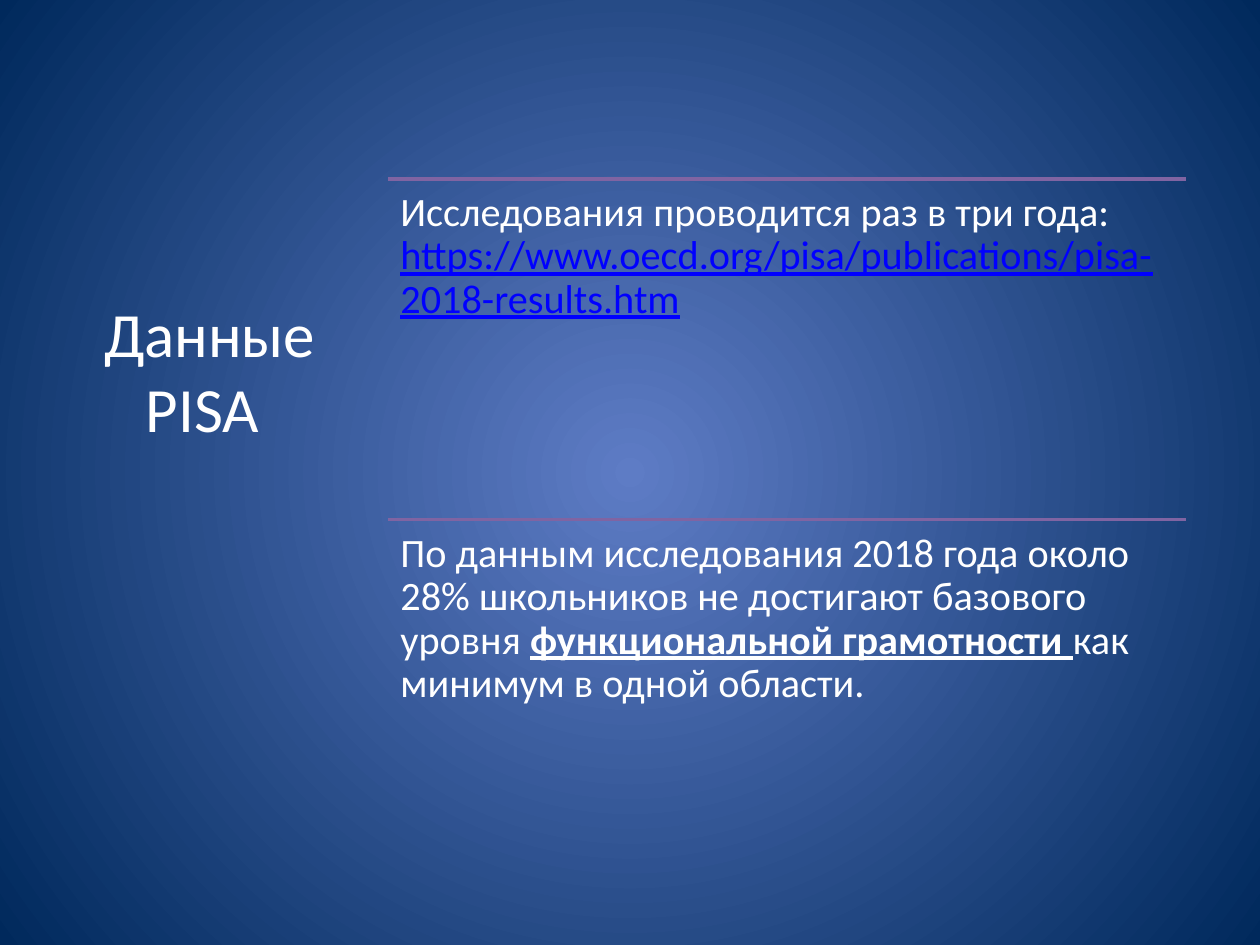
"""Build a slide with PISA study facts beside a title."""

from dataclasses import dataclass

from lxml.etree import SubElement
from pptx import Presentation
from pptx.dml.color import RGBColor
from pptx.enum.shapes import MSO_CONNECTOR
from pptx.enum.text import MSO_ANCHOR, PP_ALIGN
from pptx.oxml.ns import qn
from pptx.slide import Slide
from pptx.util import Inches, Pt


@dataclass(frozen=True)
class Theme:
    font: str = "Calibri"
    title_size: int = 36
    body_size: int = 23
    rule_width: int = 2
    text: str = "FFFFFF"
    link: str = "0000FF"
    rule: str = "8064A2"
    glow: str = "5E7CC5"
    edge: str = "00295C"


@dataclass(frozen=True)
class Span:
    text: str
    color: str
    bold: bool = False
    underline: bool = False


@dataclass(frozen=True)
class Area:
    left: float
    top: float
    width: float
    height: float


THEME = Theme()
TITLE_AREA = Area(0.5, 0.3, 2.33, 5.87)
FACTS_AREA = Area(3.08, 1.42, 6.33, 5.41)
FACTS = (
    (
        Span("Исследования проводится раз в три года: ", THEME.text),
        Span(
            "https://www.oecd.org/pisa/publications/pisa-2018-results.htm",
            THEME.link,
            underline=True,
        ),
    ),
    (
        Span(
            "По данным исследования 2018 года около 28% школьников "
            "не достигают базового уровня ",
            THEME.text,
        ),
        Span("функциональной грамотности ", THEME.text, bold=True, underline=True),
        Span("как минимум в одной области.", THEME.text),
    ),
)


def paint_background(page: Slide) -> None:
    """Fill the page with a glow that darkens from its centre."""
    fill = page.background.fill
    fill.gradient()
    for stop, color in zip(fill.gradient_stops, (THEME.glow, THEME.edge)):
        stop.color.rgb = RGBColor.from_string(color)
    gradient = next(page.element.iter(qn("a:gradFill")))
    gradient.remove(gradient.find(qn("a:lin")))
    circle = SubElement(gradient, qn("a:path"), {"path": "circle"})
    SubElement(circle, qn("a:fillToRect"), dict.fromkeys("ltrb", "50000"))


def add_text(
    page: Slide,
    area: Area,
    spans: tuple[Span, ...],
    *,
    size: int,
    align: PP_ALIGN = PP_ALIGN.LEFT,
    anchor: MSO_ANCHOR = MSO_ANCHOR.TOP,
    spacing: float = 1.0,
    margin: float = 0.1,
    closing_break: bool = False,
) -> None:
    """Add a wrapped text box holding one paragraph of spans."""
    box = page.shapes.add_textbox(
        Inches(area.left), Inches(area.top), Inches(area.width), Inches(area.height)
    )
    frame = box.text_frame
    frame.word_wrap = True
    frame.vertical_anchor = anchor
    frame.margin_top = frame.margin_bottom = Inches(margin)
    frame.margin_left = frame.margin_right = Inches(0.1)
    para = frame.paragraphs[0]
    para.alignment = align
    para.line_spacing = spacing
    para.font.size = Pt(size)
    for span in spans:
        run = para.add_run()
        run.text = span.text
        run.font.name = THEME.font
        run.font.size = Pt(size)
        run.font.bold = span.bold
        run.font.underline = span.underline
        run.font.color.rgb = RGBColor.from_string(span.color)
    if closing_break:
        para.add_line_break()
        end = SubElement(para._p, qn("a:endParaRPr"))
        end.set("sz", str(size * 100))


def add_rule(page: Slide, left: float, top: float, width: float) -> None:
    """Add a horizontal rule."""
    rule = page.shapes.add_connector(
        MSO_CONNECTOR.STRAIGHT,
        Inches(left),
        Inches(top),
        Inches(left + width),
        Inches(top),
    )
    rule.line.color.rgb = RGBColor.from_string(THEME.rule)
    rule.line.width = Pt(THEME.rule_width)
    SubElement(rule._element.spPr, qn("a:effectLst"))


def main() -> None:
    """Build and save the deck."""
    deck = Presentation()
    deck.slide_width, deck.slide_height = Inches(10), Inches(7.5)
    page = deck.slides.add_slide(deck.slide_layouts[6])
    paint_background(page)
    add_text(
        page,
        TITLE_AREA,
        (Span("Данные PISA ", THEME.text),),
        size=THEME.title_size,
        align=PP_ALIGN.CENTER,
        anchor=MSO_ANCHOR.MIDDLE,
        margin=0.05,
        closing_break=True,
    )
    row_height = FACTS_AREA.height / len(FACTS)
    for index, spans in enumerate(FACTS):
        top = FACTS_AREA.top + index * row_height
        add_rule(page, FACTS_AREA.left, top, FACTS_AREA.width)
        row = Area(FACTS_AREA.left, top, FACTS_AREA.width, row_height)
        add_text(page, row, spans, size=THEME.body_size, spacing=0.9)
    deck.save("out.pptx")


if __name__ == "__main__":
    main()
